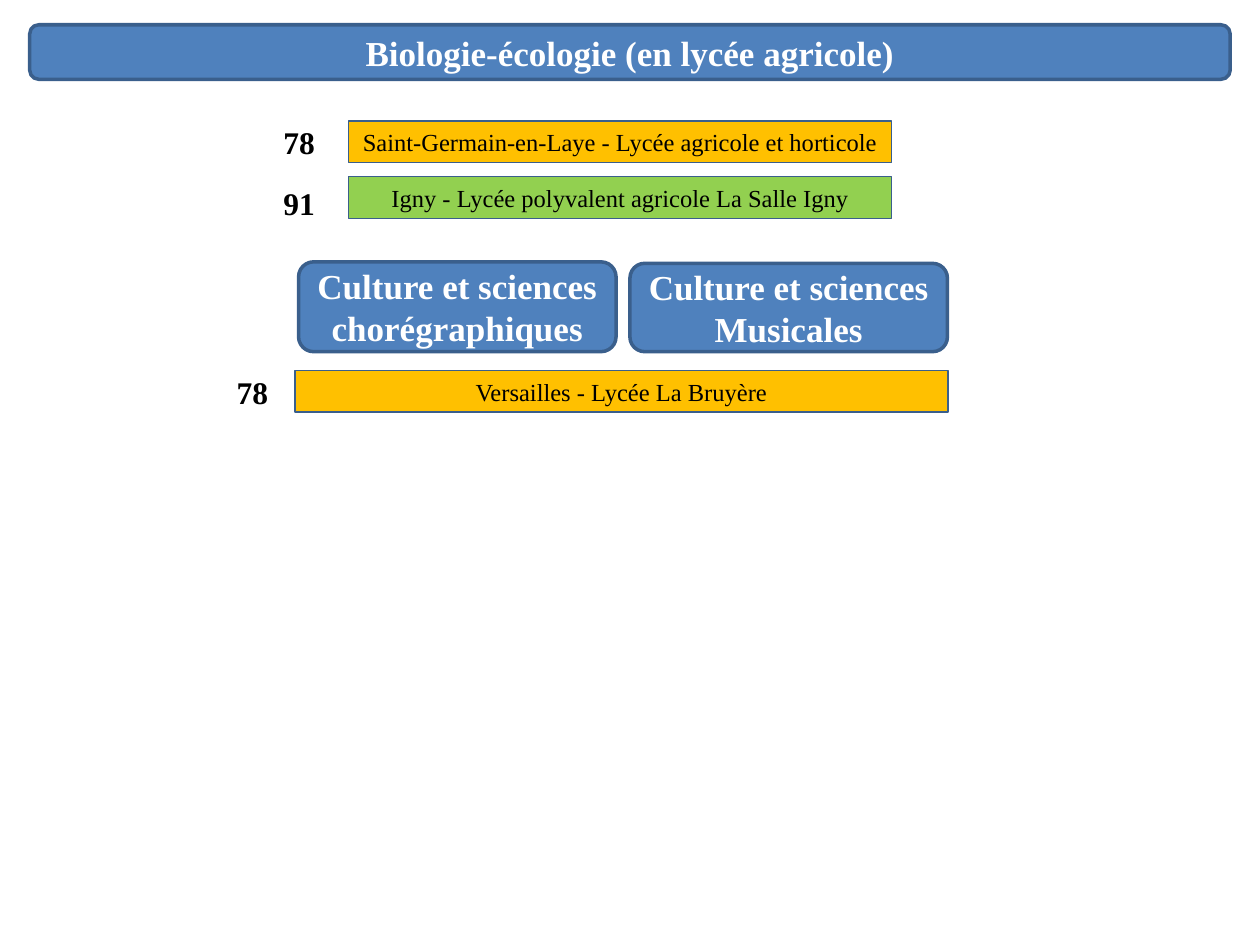
from pptx import Presentation
from pptx.dml.color import RGBColor
from pptx.enum import shapes, text
from pptx.util import Cm, Pt

WHITE = RGBColor(0xFF, 0xFF, 0xFF)
BLACK = RGBColor(0, 0, 0)
BLUE = RGBColor(0x4F, 0x81, 0xBD)
NAVY = RGBColor(0x3A, 0x5F, 0x8C)
AMBER = RGBColor(0xFF, 0xC0, 0x00)
GREEN = RGBColor(0x92, 0xD0, 0x50)


def write(box, wording, size, color, bold):
    """Centre the wording in the box, one paragraph per line."""
    frame = box.text_frame
    frame.word_wrap = True
    frame.text = wording
    for para in frame.paragraphs:
        para.alignment = text.PP_ALIGN.CENTER
        para.font.name = "Times New Roman"
        para.font.size = Pt(size)
        para.font.bold = bold
        para.font.color.rgb = color


def add_panel(kind, bounds, fill, line_width):
    panel = slide.shapes.add_shape(kind, *map(Cm, bounds))
    panel.shadow.inherit = False
    panel.fill.solid()
    panel.fill.fore_color.rgb = fill
    panel.line.color.rgb = NAVY
    panel.line.width = Pt(line_width)
    panel.text_frame.vertical_anchor = text.MSO_ANCHOR.MIDDLE
    return panel


deck = Presentation()
deck.slide_width = Cm(25.4)
deck.slide_height = Cm(19.05)
slide = deck.slides.add_slide(deck.slide_layouts[6])

# Subject headings: left, top, width, height in cm
headings = [
    ("Biologie-écologie (en lycée agricole)", (0.6, 0.5, 24.2, 1.1)),
    ("Culture et sciences chorégraphiques", (6.02, 5.28, 6.4, 1.81)),
    ("Culture et sciences\nMusicales", (12.7, 5.31, 6.4, 1.78)),
]
for wording, bounds in headings:
    heading = add_panel(shapes.MSO_SHAPE.ROUNDED_RECTANGLE, bounds, BLUE, 2)
    write(heading, wording, 20, WHITE, True)

# Schools: left, top, width of the bar, then left, top of the department number
schools = [
    ("Saint-Germain-en-Laye - Lycée agricole et horticole", AMBER,
     (7.03, 2.44, 10.95), "78", (5.03, 2.35)),
    ("Igny - Lycée polyvalent agricole La Salle Igny", GREEN,
     (7.03, 3.56, 10.95), "91", (5.03, 3.59)),
    ("Versailles - Lycée La Bruyère", AMBER,
     (5.95, 7.47, 13.16), "78", (4.09, 7.39)),
]
for school, fill, bar_bounds, department, corner in schools:
    bar = add_panel(shapes.MSO_SHAPE.RECTANGLE, (*bar_bounds, 0.84), fill, 0.75)
    write(bar, school, 14, BLACK, False)
    label = slide.shapes.add_textbox(*map(Cm, (*corner, 2, 1.02)))
    write(label, department, 18, BLACK, True)

deck.save("out.pptx")
